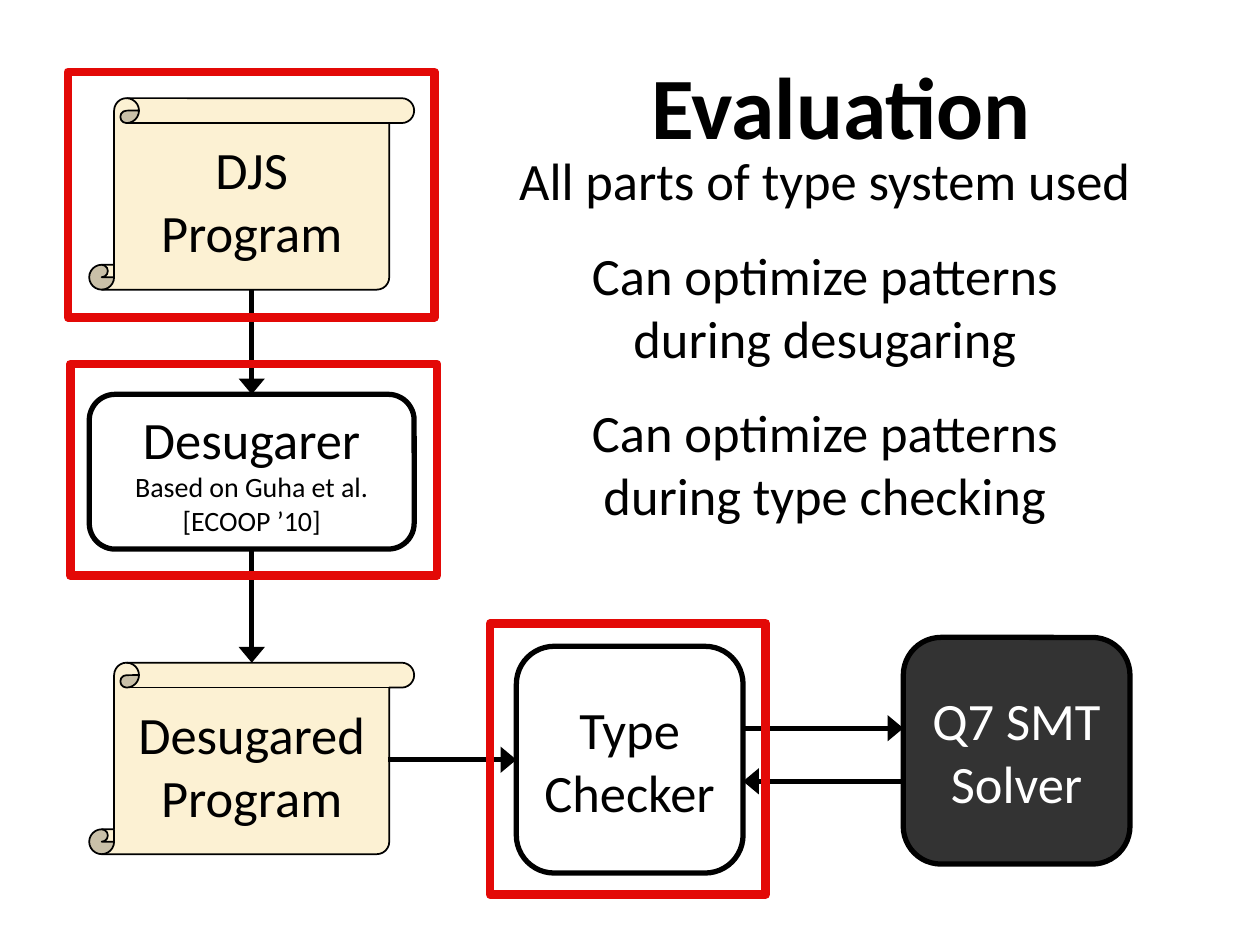
from pptx import Presentation
from pptx import util as u
from pptx.dml.color import RGBColor
from pptx.enum import shapes, text
from pptx.oxml.ns import qn
from lxml import etree

COLORS = {"ink": "000000", "paper": "FCF1D3", "solver": "333333",
          "white": "FFFFFF", "highlight": "E30907"}
FONT = "Calibri"
KIND = shapes.MSO_SHAPE
SCROLL = (6.55, 3.86)
SQUARE = (4.57, 4.57)


def rgb(name):
    return RGBColor.from_string(COLORS[name])


def write(frame, wording, sizes, color="ink", bold=False, space_after=0):
    """Fill a frame with centred paragraphs; the last size repeats."""
    frame.text = wording
    for i, paragraph in enumerate(frame.paragraphs):
        paragraph.alignment = text.PP_ALIGN.CENTER
        paragraph.space_after = u.Pt(space_after)
        font = paragraph.font
        font.name, font.bold = FONT, bold
        font.size = u.Pt(sizes[min(i, len(sizes) - 1)])
        font.color.rgb = rgb(color)


def outlined(slide, kind, box, fill=None, line="ink", width=3):
    shape = slide.shapes.add_shape(kind, *map(u.Cm, box))
    shape.shadow.inherit = False
    if fill:
        shape.fill.solid()
        shape.fill.fore_color.rgb = rgb(fill)
    else:
        shape.fill.background()
    shape.line.color.rgb = rgb(line)
    shape.line.width = u.Pt(width)
    return shape


def label(shape, wording, sizes=(30,), color="ink"):
    frame = shape.text_frame
    frame.word_wrap = False
    frame.vertical_anchor = text.MSO_ANCHOR.MIDDLE
    write(frame, wording, sizes, color)


def program(slide, left, top, wording):
    scroll = outlined(slide, KIND.VERTICAL_SCROLL, (left, top, *SCROLL), "paper", width=1)
    scroll.adjustments[0] = 0.13
    label(scroll, wording)


def stage(slide, box, wording, sizes=(30,), fill=None, color="ink"):
    label(outlined(slide, KIND.ROUNDED_RECTANGLE, box, fill), wording, sizes, color)


def arrow(slide, x1, y1, x2, y2):
    link = slide.shapes.add_connector(shapes.MSO_CONNECTOR.STRAIGHT,
                                      *map(u.Cm, (x1, y1, x2, y2)))
    link.line.color.rgb = rgb("ink")
    link.line.width = u.Pt(3)
    properties = link.element.spPr
    etree.SubElement(properties.find(qn("a:ln")), qn("a:tailEnd"),
                     type="triangle", w="lg", len="med")
    etree.SubElement(properties, qn("a:effectLst"))


def desugaring_column(slide, left, top):
    """Source program, desugarer and desugared program, top to bottom."""
    width, height = SCROLL
    middle = left + width / 2
    desugarer_top, desugarer_height = top + 5.97, 3.12
    output_top = top + 11.38
    program(slide, left, top, "DJS\vProgram")
    stage(slide, (left, desugarer_top, width, desugarer_height),
          "Desugarer\nBased on Guha et al.\v[ECOOP ’10]", (30, 16))
    program(slide, left, output_top, "Desugared\nProgram")
    arrow(slide, middle, top + height, middle, desugarer_top)
    arrow(slide, middle, desugarer_top + desugarer_height, middle, output_top)


def checking_row(slide, left, top):
    """Type checker, fed from the left, in dialogue with the solver."""
    side = SQUARE[0]
    checker_right, solver_left = left + side, left + 7.8
    stage(slide, (left, top, *SQUARE), "Type\nChecker")
    stage(slide, (solver_left, top - 0.18, *SQUARE), "Q7 SMT\vSolver",
          fill="solver", color="white")
    arrow(slide, left - 2.59, top + side / 2, left, top + side / 2)
    arrow(slide, checker_right, top + 1.65, solver_left, top + 1.65)
    arrow(slide, solver_left, top + 2.72, checker_right, top + 2.72)


def message(slide, box, wording, size, anchor, bold=False, space_after=0):
    frame = slide.shapes.add_textbox(*map(u.Cm, box)).text_frame
    frame.word_wrap = True
    frame.vertical_anchor = anchor
    write(frame, wording, (size,), bold=bold, space_after=space_after)


def main():
    deck = Presentation()
    deck.slide_width, deck.slide_height = u.Cm(25.4), u.Cm(19.05)
    slide = deck.slides.add_slide(deck.slide_layouts[6])

    # Flow diagram
    desugaring_column(slide, 1.8, 1.98)
    checking_row(slide, 10.41, 13.03)

    # Findings and title
    findings = ("All parts of type system used",
                "Can optimize patterns\vduring desugaring",
                "Can optimize patterns\vduring type checking")
    message(slide, (10.08, 2.86, 13.1, 7.95), "\n".join(findings), 30,
            text.MSO_ANCHOR.TOP, space_after=18)
    message(slide, (10.41, 0.91, 13.1, 2.39), "Evaluation", 50,
            text.MSO_ANCHOR.MIDDLE, bold=True)

    # Highlights around the evaluated parts
    for box in ((1.42, 7.34, 7.39, 4.27),
                (9.88, 12.57, 5.56, 5.46),
                (1.37, 1.45, 7.39, 4.95)):
        outlined(slide, KIND.RECTANGLE, box, line="highlight", width=5)

    deck.save("out.pptx")


if __name__ == "__main__":
    main()
